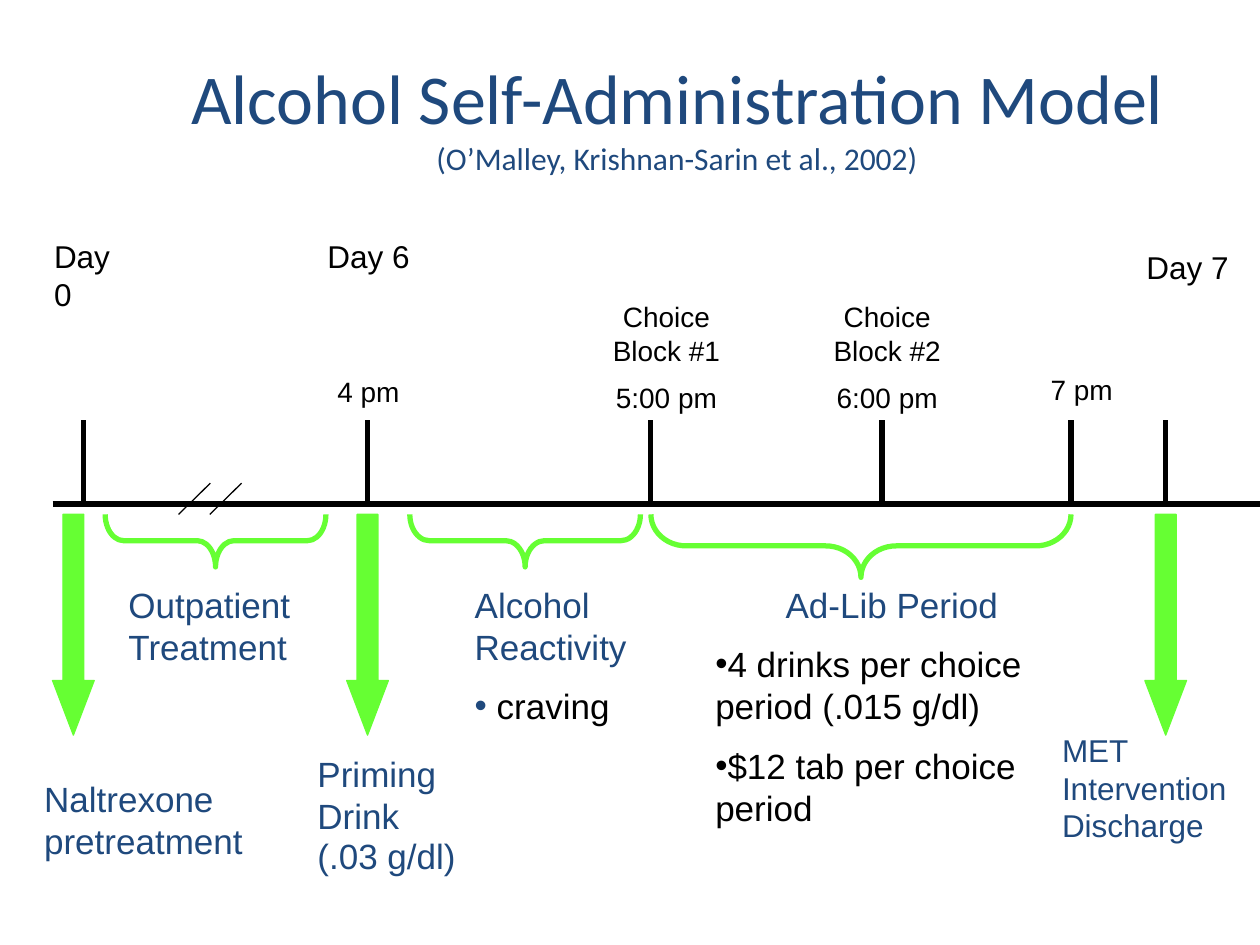
import pptx
import pptx.dml.color
import pptx.enum.shapes
import pptx.enum.text
import pptx.oxml
import pptx.oxml.ns
import pptx.util

Cm, Pt = pptx.util.Cm, pptx.util.Pt
SHAPE = pptx.enum.shapes.MSO_SHAPE
ALIGN = pptx.enum.text.PP_ALIGN
ANCHOR = pptx.enum.text.MSO_ANCHOR
NS = pptx.oxml.ns.nsdecls("a")
NAVY, BLACK, GREEN = "1F497D", "000000", "66FF33"


def paint(colour_format, colour):
    colour_format.rgb = pptx.dml.color.RGBColor.from_string(colour)


def draw_line(page, ends, width):
    line = page.shapes.add_connector(
        pptx.enum.shapes.MSO_CONNECTOR.STRAIGHT, *map(Cm, ends))
    paint(line.line.color, BLACK)
    line.line.width = Pt(width)
    properties = line._element.find(pptx.oxml.ns.qn("p:spPr"))
    properties.append(pptx.oxml.parse_xml(f"<a:effectLst {NS}/>"))


deck = pptx.Presentation()
deck.slide_width, deck.slide_height = Cm(25.4), Cm(19.05)
page = deck.slides.add_slide(deck.slide_layouts[5])

# Title and citation
title = page.shapes.title
title.left, title.top, title.width, title.height = map(Cm, (2.54, 1.06, 22.22, 2.54))
title.text_frame.auto_size = pptx.enum.text.MSO_AUTO_SIZE.NONE
title.text_frame.vertical_anchor = ANCHOR.MIDDLE
para = title.text_frame.paragraphs[0]
para.alignment = ALIGN.CENTER
for text, size in (("Alcohol Self-Administration Model", 40),
                   ("(O’Malley, Krishnan-Sarin et al., 2002)", 18)):
    if para.runs:
        para.add_line_break()
    span = para.add_run()
    span.text = text
    for name, value in {"name": "Calibri", "size": Pt(size)}.items():
        setattr(span.font, name, value)
    paint(span.font.color, NAVY)

# Time axis, ticks and break marks
AXIS = 10.16
draw_line(page, (1.06, AXIS, 25.4, AXIS), 3)
for x in (1.69, 7.41, 13.12, 17.78, 21.59, 23.5):
    draw_line(page, (x, 8.47, x, AXIS), 3)
for x in (3.6, 4.23):
    draw_line(page, (x, 10.37, x + 0.64, 9.74), 0.75)

# Down arrows at the single events
BELOW = 10.37
for centre in (1.48, 7.41, 23.5):
    arrow = page.shapes.add_shape(
        SHAPE.DOWN_ARROW, Cm(centre - 0.42), Cm(BELOW), Cm(0.84), Cm(4.45))
    arrow.adjustments[0], arrow.adjustments[1] = 0.5, 1.31
    arrow.shadow.inherit = False
    arrow.fill.solid()
    paint(arrow.fill.fore_color, GREEN)
    paint(arrow.line.color, GREEN)
    arrow.line.width = Pt(0.75)

# Braces under the periods, turned to point down
for start, end, depth, curve in ((2.12, 6.57, 1.06, 0.35),
                                 (8.26, 12.91, 1.06, 0.37),
                                 (13.12, 21.59, 1.27, 0.56)):
    length = end - start
    brace = page.shapes.add_shape(
        SHAPE.RIGHT_BRACE, Cm((start + end - depth) / 2),
        Cm(BELOW + (depth - length) / 2), Cm(depth), Cm(length))
    brace.rotation = 90
    brace.adjustments[0], brace.adjustments[1] = curve, 0.5
    brace.shadow.inherit = False
    brace.fill.background()
    paint(brace.line.color, GREEN)
    brace.line.width = Pt(3)

# Labels: place, size, alignment, anchor, then (text, colour, bullet colour)
LEFT, CENTER, TOP = ALIGN.LEFT, ALIGN.CENTER, ANCHOR.TOP
labels = [
    ((0.84, 4.65, 2.11, 1.02), 18, LEFT, TOP, [("Day 0", BLACK, None)]),
    ((6.35, 4.65, 2.54, 1.02), 18, LEFT, TOP, [("Day 6", BLACK, None)]),
    ((22.86, 4.88, 2.54, 1.02), 18, LEFT, TOP, [("Day 7", BLACK, None)]),
    ((6.55, 7.42, 2.97, 0.94), 16, LEFT, TOP, [("4 pm", BLACK, None)]),
    ((20.32, 6.35, 2.97, 1.96), 16, CENTER, ANCHOR.BOTTOM, [("7 pm", BLACK, None)]),
    ((11.63, 5.92, 3.61, 2.64), 16, CENTER, TOP,
     [("Choice Block #1", BLACK, None), ("5:00 pm", BLACK, None)]),
    ((16.08, 5.92, 3.61, 2.64), 16, CENTER, TOP,
     [("Choice Block #2", BLACK, None), ("6:00 pm", BLACK, None)]),
    ((2.34, 11.63, 4.24, 1.96), 20, LEFT, TOP,
     [("Outpatient Treatment", NAVY, None)]),
    ((9.32, 11.63, 4.88, 4.5), 20, LEFT, TOP,
     [("Alcohol Reactivity", NAVY, None), (" craving", BLACK, NAVY)]),
    ((14.17, 11.63, 7.62, 5.33), 20, LEFT, TOP,
     [("Ad-Lib Period", NAVY, None),
      ("4 drinks per choice period (.015 g/dl)", BLACK, BLACK),
      ("$12 tab per choice period", BLACK, BLACK)]),
    ((0.64, 14.61, 4.88, 3.81), 20, LEFT, ANCHOR.MIDDLE,
     [("Naltrexone pretreatment", NAVY, None)]),
    ((6.15, 15.04, 3.38, 1.96), 20, LEFT, TOP, [("Priming Drink", NAVY, None)]),
    ((6.15, 16.69, 7.62, 1.09), 20, LEFT, TOP, [("(.03 g/dl)", NAVY, None)]),
    ((21.16, 14.61, 4.24, 2.54), 18, LEFT, TOP,
     [("MET Intervention Discharge", NAVY, None)]),
]
for place, size, align, anchor, lines in labels:
    box = page.shapes.add_textbox(*map(Cm, place))
    frame = box.text_frame
    frame.word_wrap = True
    frame.vertical_anchor = anchor
    for number, (text, colour, bullet) in enumerate(lines):
        para = frame.add_paragraph() if number else frame.paragraphs[0]
        para.alignment = align
        para.space_before = Pt(size / 2 if number else 0)
        span = para.add_run()
        span.text = text
        for name, value in {"name": "Arial", "size": Pt(size)}.items():
            setattr(span.font, name, value)
        paint(span.font.color, colour)
        if bullet:
            properties = para._p.get_or_add_pPr()
            for part in (f'<a:buClr {NS}><a:srgbClr val="{bullet}"/></a:buClr>',
                         f'<a:buFont {NS} typeface="Arial"/>',
                         f'<a:buChar {NS} char="•"/>'):
                properties.append(pptx.oxml.parse_xml(part))
        elif text == "Ad-Lib Period":
            para.alignment = CENTER

deck.save("out.pptx")
